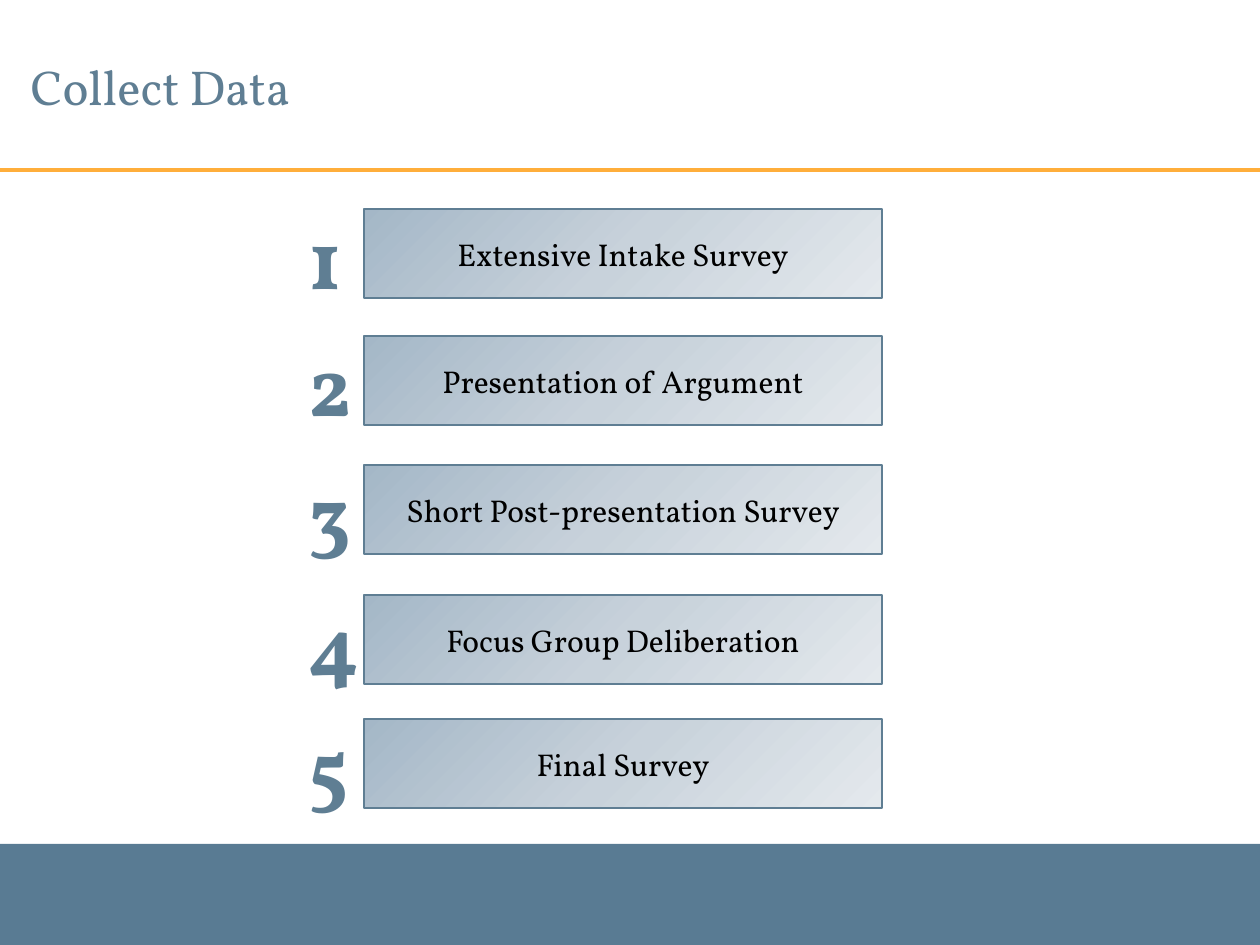
from lxml import etree
from pptx import Presentation
from pptx.dml.color import RGBColor
from pptx.enum.shapes import MSO_CONNECTOR, MSO_SHAPE
from pptx.enum.text import MSO_ANCHOR, MSO_AUTO_SIZE, PP_ALIGN
from pptx.oxml import parse_xml
from pptx.oxml.ns import nsdecls, qn
from pptx.util import Emu, Pt

RECT = MSO_SHAPE.RECTANGLE
STRAIGHT = MSO_CONNECTOR.STRAIGHT
MIDDLE = MSO_ANCHOR.MIDDLE
LEFT, CENTER = PP_ALIGN.LEFT, PP_ALIGN.CENTER
FIT_SHAPE = MSO_AUTO_SIZE.SHAPE_TO_FIT_TEXT

SLATE = RGBColor(0x5F, 0x7E, 0x93)
BAND = RGBColor(0x59, 0x7B, 0x93)
ORANGE = RGBColor(0xFF, 0xAE, 0x3B)
BLACK = RGBColor(0, 0, 0)
STOPS = [
    (0, RGBColor(0xA4, 0xB7, 0xC7)),
    (50, RGBColor(0xC8, 0xD2, 0xDB)),
    (100, RGBColor(0xE4, 0xE9, 0xED)),
]
FONT = "Vollkorn"
STEPS = [
    (209, "Extensive Intake Survey"),
    (336, "Presentation of Argument"),
    (465, "Short Post-presentation Survey"),
    (595, "Focus Group Deliberation"),
    (719, "Final Survey"),
]


def px(*values):
    return [Emu(round(v * 914400 / 126)) for v in values]


def add_text(tf, text, size, color, align, bold=False):
    p = tf.paragraphs[0]
    p.alignment = align
    r = p.add_run()
    r.text = text
    r.font.name = FONT
    r.font.size = Pt(size)
    r.font.bold = bold
    r.font.color.rgb = color


prs = Presentation()
prs.slide_width, prs.slide_height = px(1260, 945)
s = prs.slides.add_slide(prs.slide_layouts[5])

rule = s.shapes.add_connector(STRAIGHT, *px(0, 170, 1260, 170))
rule.line.color.rgb = ORANGE
rule.line.width = Pt(2)
etree.SubElement(rule._element.spPr, qn("a:effectLst"))

band = s.shapes.add_shape(RECT, *px(0, 844, 1260, 101))
band.shadow.inherit = False
band.fill.solid()
band.fill.fore_color.rgb = BAND
band.line.fill.background()

title = s.shapes.title
title.left, title.top, title.width, title.height = px(18, 20, 1226, 132)
title.text_frame.vertical_anchor = MIDDLE
add_text(title.text_frame, "Collect Data", 28, SLATE, LEFT)

stops = "".join(
    f'<a:gs pos="{pos * 1000}"><a:srgbClr val="{color}"/></a:gs>' for pos, color in STOPS
)
gradient = (
    f'<a:gradFill {nsdecls("a")} rotWithShape="1"><a:gsLst>{stops}</a:gsLst>'
    '<a:path path="circle"><a:fillToRect r="100000" b="100000"/></a:path></a:gradFill>'
)

for number, (top, label) in enumerate(STEPS, 1):
    box = s.shapes.add_shape(RECT, *px(364, top, 518, 89))
    box.shadow.inherit = False
    box.line.color.rgb = SLATE
    box.line.width = Pt(0.75)
    box._element.spPr.find(qn("a:prstGeom")).addnext(parse_xml(gradient))
    box.text_frame.vertical_anchor = MIDDLE
    add_text(box.text_frame, label, 18, BLACK, CENTER)

    tb = s.shapes.add_textbox(*px(296, top - 10, 68, 115))
    tb.text_frame.word_wrap = False
    tb.text_frame.auto_size = FIT_SHAPE
    add_text(tb.text_frame, str(number), 48, SLATE, LEFT, bold=True)

prs.save("out.pptx")
